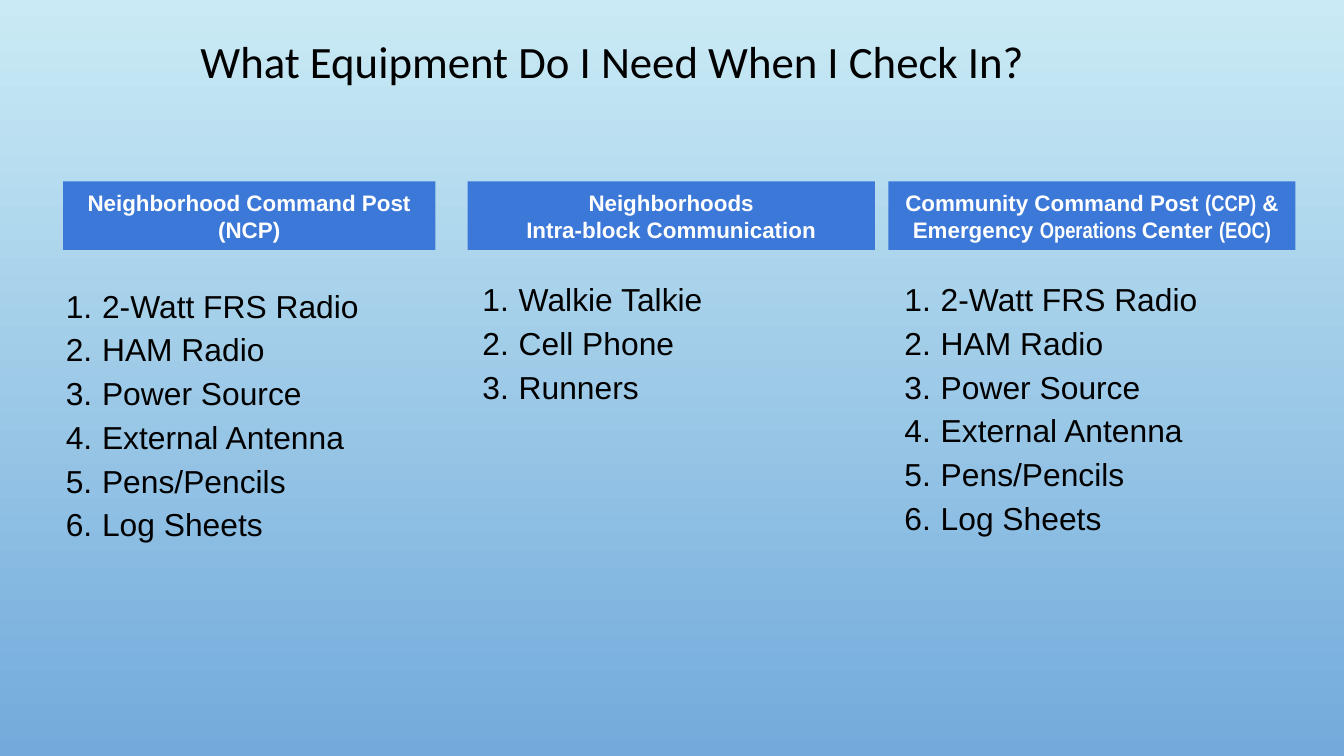
from lxml import etree
from pptx import Presentation
from pptx.dml.color import RGBColor
from pptx.enum.shapes import MSO_SHAPE
from pptx.enum.text import MSO_ANCHOR, PP_ALIGN
from pptx.oxml.ns import qn
from pptx.util import Inches, Pt

RECTANGLE = MSO_SHAPE.RECTANGLE
TOP, MIDDLE = MSO_ANCHOR.TOP, MSO_ANCHOR.MIDDLE
CENTER = PP_ALIGN.CENTER
CELL = 0.1  # inches per grid column and row


def color(value):
    return RGBColor.from_string(value)


def grid(cells):
    return Inches(cells * CELL)


class Deck:
    font, narrow, title_font = "Arial", "Arial Narrow", "Calibri"
    ink, paper, accent = "000000", "FFFFFF", "3C78D8"
    sky = ("CAEBF5", "72AADB")
    padding = 0.6

    def __init__(self, columns, rows):
        self.presentation = Presentation()
        self.presentation.slide_width = grid(columns)
        self.presentation.slide_height = grid(rows)
        self.slide = self.presentation.slides.add_slide(self.presentation.slide_layouts[6])

    def background(self):
        fill = self.slide.background.fill
        fill.gradient()
        fill.gradient_angle = 270
        for position, (stop, value) in enumerate(zip(fill.gradient_stops, self.sky)):
            stop.position = position
            stop.color.rgb = color(value)

    def frame(self, shape, anchor, padding):
        frame = shape.text_frame
        frame.word_wrap = True
        frame.vertical_anchor = anchor
        frame.margin_left = frame.margin_right = grid(padding)
        frame.margin_top = frame.margin_bottom = grid(padding)
        return frame

    def paragraphs(self, frame, count):
        return [frame.paragraphs[0]] + [frame.add_paragraph() for _ in range(count - 1)]

    def style(self, paragraph, size, value, name=None, bold=False):
        font = paragraph.font
        font.size, font.bold = Pt(size), bold
        font.color.rgb = color(value)
        if name:
            font.name = name

    def text_box(self, left, top, width, height, anchor, padding):
        box = self.slide.shapes.add_textbox(*map(grid, (left, top, width, height)))
        return self.frame(box, anchor, padding)

    def title(self, text, left, top, width, height):
        paragraph = self.text_box(left, top, width, height, MIDDLE, 0.4).paragraphs[0]
        paragraph.text = text
        paragraph.alignment = CENTER
        self.style(paragraph, 24, self.ink, self.title_font)

    def header(self, lines, left, top, width, height):
        """Each line is a list of runs that alternate between wide and narrow type."""
        shape = self.slide.shapes.add_shape(RECTANGLE, *map(grid, (left, top, width, height)))
        shape.shadow.inherit = False
        shape.fill.solid()
        shape.fill.fore_color.rgb = color(self.accent)
        shape.line.fill.background()
        frame = self.frame(shape, MIDDLE, self.padding)
        for paragraph, texts in zip(self.paragraphs(frame, len(lines)), lines):
            paragraph.alignment = CENTER
            self.style(paragraph, 12, self.paper, bold=True)
            for index, text in enumerate(texts):
                run = paragraph.add_run()
                run.text = text
                run.font.name = self.narrow if index % 2 else self.font

    def numbered_list(self, items, left, top, width, height):
        frame = self.text_box(left, top, width, height, TOP, self.padding)
        for paragraph, item in zip(self.paragraphs(frame, len(items)), items):
            paragraph.text = item
            paragraph.line_spacing = 1.15
            properties = paragraph._p.get_or_add_pPr()
            properties.set("marL", str(grid(3.2)))
            properties.set("indent", str(grid(-2.7)))
            bullet_color = etree.SubElement(properties, qn("a:buClr"))
            etree.SubElement(bullet_color, qn("a:srgbClr"), val=self.ink)
            etree.SubElement(properties, qn("a:buFont"), typeface=self.font)
            etree.SubElement(properties, qn("a:buAutoNum"), type="arabicPeriod")
            self.style(paragraph, 17, self.ink, self.font)

    def save(self):
        self.presentation.save("out.pptx")


def main():
    deck = Deck(100, 56.25)
    deck.background()
    deck.title("What Equipment Do I Need When I Check In?", 3.1, 0.6, 84.9, 7.8)

    station_items = ["2-Watt FRS Radio", "HAM Radio", "Power Source",
                     "External Antenna", "Pens/Pencils", "Log Sheets"]
    block_items = ["Walkie Talkie", "Cell Phone", "Runners"]

    # Header lines, header left and width, items, list box
    columns = [
        ([["Neighborhood Command Post (NCP)"]], 4.7, 27.7,
         station_items, (3.8, 20.3, 29.6, 28.3)),
        ([["Neighborhoods"], ["Intra-block Communication"]], 34.8, 30.3,
         block_items, (34.8, 19.8, 30.3, 26.7)),
        ([["Community Command Post ", "(CCP)", " &"],
          ["Emergency ", "Operations ", "Center ", "(EOC)"]], 66.1, 30.3,
         station_items, (66.2, 19.8, 29, 26.7)),
    ]
    for lines, left, width, items, list_box in columns:
        deck.header(lines, left, 13.5, width, 5.1)
        deck.numbered_list(items, *list_box)
    deck.save()


if __name__ == "__main__":
    main()
